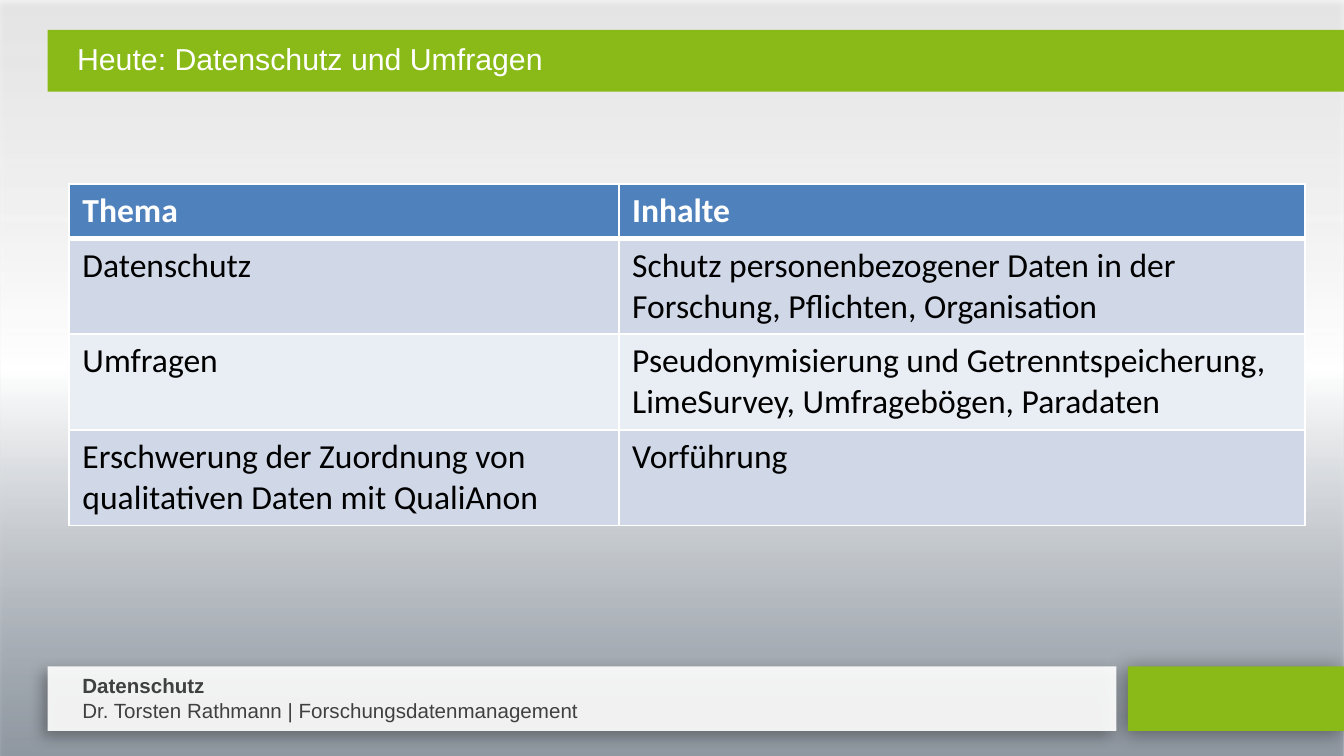
from dataclasses import dataclass

from lxml import etree
from pptx import Presentation
from pptx.dml.color import RGBColor
from pptx.enum.shapes import MSO_SHAPE
from pptx.enum.text import MSO_ANCHOR, MSO_AUTO_SIZE, PP_ALIGN
from pptx.oxml.ns import qn
from pptx.util import Pt

RECT = MSO_SHAPE.RECTANGLE
TOP = MSO_ANCHOR.TOP
LEFT = PP_ALIGN.LEFT
GROW, FIXED = MSO_AUTO_SIZE.SHAPE_TO_FIT_TEXT, MSO_AUTO_SIZE.NONE


@dataclass(frozen=True)
class Theme:
    green: str = "89BA17"
    white: str = "FFFFFF"
    black: str = "000000"
    gray: str = "404040"
    head: str = "4F81BD"
    bands: tuple = ("D0D8E8", "E9EDF4")
    # position, colour, opacity (all in percent)
    sky: tuple = ((0, "818C98", 75), (51, "FFFFFF", 100), (100, "F2F2F2", 73))
    sans: str = "Arial"
    body: str = "Calibri"
    title_size: float = 16.2
    cell_size: float = 18
    foot_size: float = 11


THEME = Theme()
WIDE, HIGH = 720, 405
ROWS = [
    ("Thema", "Inhalte"),
    ("Datenschutz",
     "Schutz personenbezogener Daten in der Forschung, Pflichten, Organisation"),
    ("Umfragen",
     "Pseudonymisierung und Getrenntspeicherung, LimeSurvey, Umfragebögen, Paradaten"),
    ("Erschwerung der Zuordnung von qualitativen Daten mit QualiAnon", "Vorführung"),
]


def add_tint(parent, color, alpha=100):
    tint = etree.SubElement(parent, qn("a:srgbClr"), val=color)
    if alpha < 100:
        etree.SubElement(tint, qn("a:alpha"), val=str(alpha * 1000))


def set_font(para, name, size, color, bold=False):
    font = para.font
    font.name, font.size, font.bold = name, Pt(size), bold
    font.color.rgb = RGBColor.from_string(color)


def add_rect(slide, box, color, shade=None):
    """Plain rectangle; shade is opacity, blur, distance and angle."""
    rect = slide.shapes.add_shape(RECT, *map(Pt, box))
    rect.fill.solid()
    rect.fill.fore_color.rgb = RGBColor.from_string(color)
    rect.line.fill.background()
    rect.shadow.inherit = False
    if shade:
        alpha, blur, dist, angle = shade
        effects = rect.element.spPr.find(qn("a:effectLst"))
        outer = etree.SubElement(
            effects, qn("a:outerShdw"), blurRad=str(Pt(blur)), dist=str(Pt(dist)),
            dir=str(angle * 60000), algn="ctr", rotWithShape="0")
        add_tint(outer, THEME.black, alpha)
    return rect


def add_backdrop(slide, box):
    rect = add_rect(slide, box, THEME.white, (35, 3.1, 1.8, 90))
    rect.fill.gradient()
    rect.fill.gradient_angle = 90
    stops = rect.element.spPr.find(".//" + qn("a:gsLst"))
    stops.clear()
    for pos, color, alpha in THEME.sky:
        stop = etree.SubElement(stops, qn("a:gs"), pos=str(pos * 1000))
        add_tint(stop, color, alpha)


def add_footer(slide, box):
    left, top, width, height = box
    # Green block at the right edge
    add_rect(slide, (left + 578.8, top, width - 578.8, height), THEME.green,
             (42, 10.8, 2, 142))
    # Translucent white panel
    panel = add_rect(slide, (left, top, 572.5, height), THEME.white, (34, 7.5, 4, 145))
    tint = panel.element.spPr.find(qn("a:solidFill")).find(qn("a:srgbClr"))
    etree.SubElement(tint, qn("a:alpha"), val="91000")
    # Talk and speaker
    note = slide.shapes.add_textbox(Pt(left + 11.5), Pt(top), Pt(430), Pt(33.5))
    frame = note.text_frame
    frame.word_wrap, frame.auto_size = True, GROW
    frame.text = "Datenschutz\nDr. Torsten Rathmann | Forschungsdatenmanagement"
    for i, para in enumerate(frame.paragraphs):
        set_font(para, THEME.sans, THEME.foot_size, THEME.gray, bold=i == 0)


def add_title(slide, box):
    left, top, width, height = box
    band = add_rect(slide, box, THEME.green)
    title = slide.shapes.title
    title.left, title.top = Pt(left), Pt(top)
    title.width, title.height = Pt(width), Pt(25)
    band.element.addnext(title.element)  # keeps the text in front of its band
    frame = title.text_frame
    frame.text = "Heute: Datenschutz und Umfragen"
    frame.vertical_anchor, frame.auto_size = TOP, FIXED
    frame.margin_left, frame.margin_top = Pt(15.8), Pt(5.8)
    para = frame.paragraphs[0]
    para.alignment = LEFT
    set_font(para, THEME.sans, THEME.title_size, THEME.white)


def add_edges(cell, widths):
    props = cell._tc.get_or_add_tcPr()
    for side, width in zip("LRTB", widths):
        edge = etree.SubElement(props, qn("a:ln" + side), w=str(Pt(width)))
        add_tint(etree.SubElement(edge, qn("a:solidFill")), THEME.white)


def add_topics(slide, box):
    table = slide.shapes.add_table(len(ROWS), 2, *map(Pt, box)).table
    first = 294.5
    for col, width in zip(table.columns, (first, box[2] - first)):
        col.width = Pt(width)
    head = 29.2
    for r, words in enumerate(ROWS):
        table.rows[r].height = Pt(head if r == 0 else (box[3] - head) / (len(ROWS) - 1))
        fill = THEME.bands[(r - 1) % 2] if r else THEME.head
        ink = THEME.black if r else THEME.white
        for c, text in enumerate(words):
            cell = table.cell(r, c)
            cell.text = text
            set_font(cell.text_frame.paragraphs[0], THEME.body, THEME.cell_size,
                     ink, bold=r == 0)
            # The rule under the header is thicker
            add_edges(cell, (1, 1, 3 if r == 1 else 1, 3 if r == 0 else 1))
            cell.fill.solid()
            cell.fill.fore_color.rgb = RGBColor.from_string(fill)


def main():
    deck = Presentation()
    deck.slide_width, deck.slide_height = Pt(WIDE), Pt(HIGH)
    slide = deck.slides.add_slide(deck.slide_layouts.get_by_name("Title Only"))
    add_backdrop(slide, (0, 0, WIDE, HIGH))
    add_footer(slide, (25.5, 357, WIDE - 25.5, 34.6))
    add_title(slide, (25.5, 16, 697.5, 33.2))
    add_topics(slide, (37, 98.6, 662, 183))
    deck.save("out.pptx")


if __name__ == "__main__":
    main()
